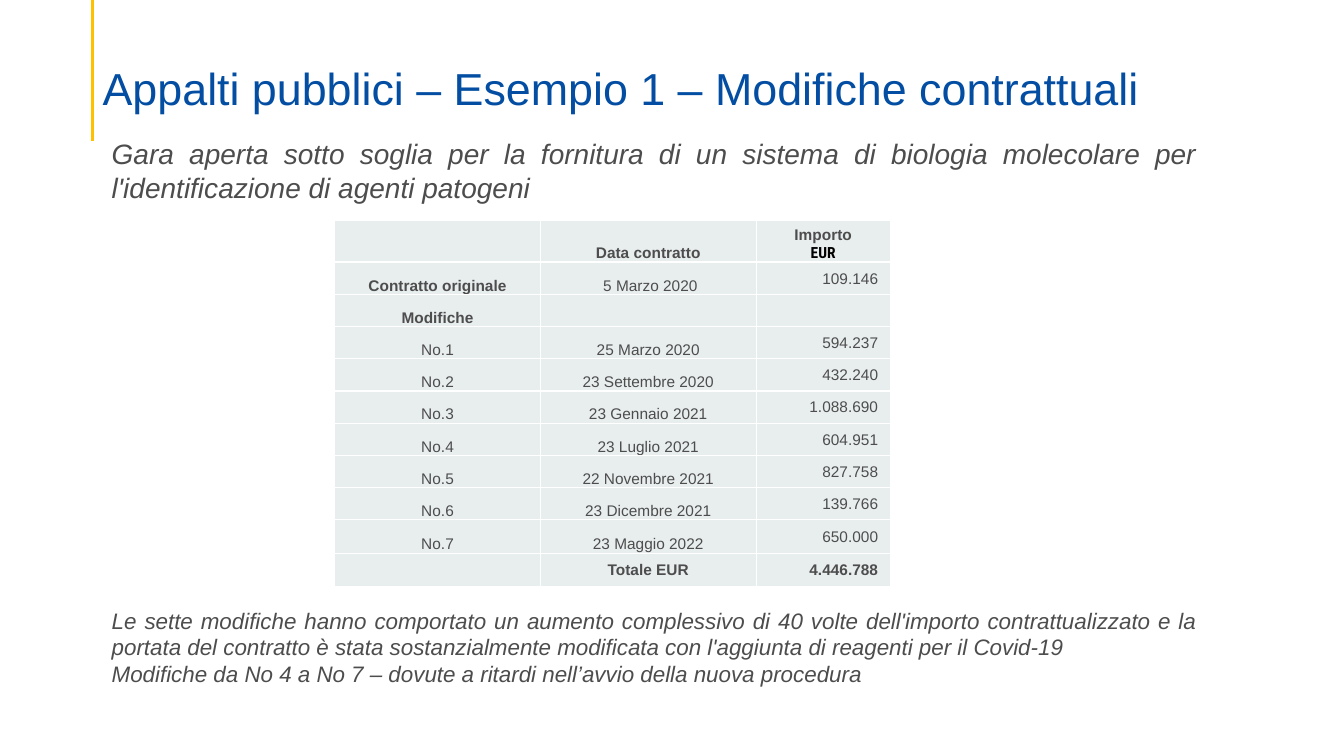
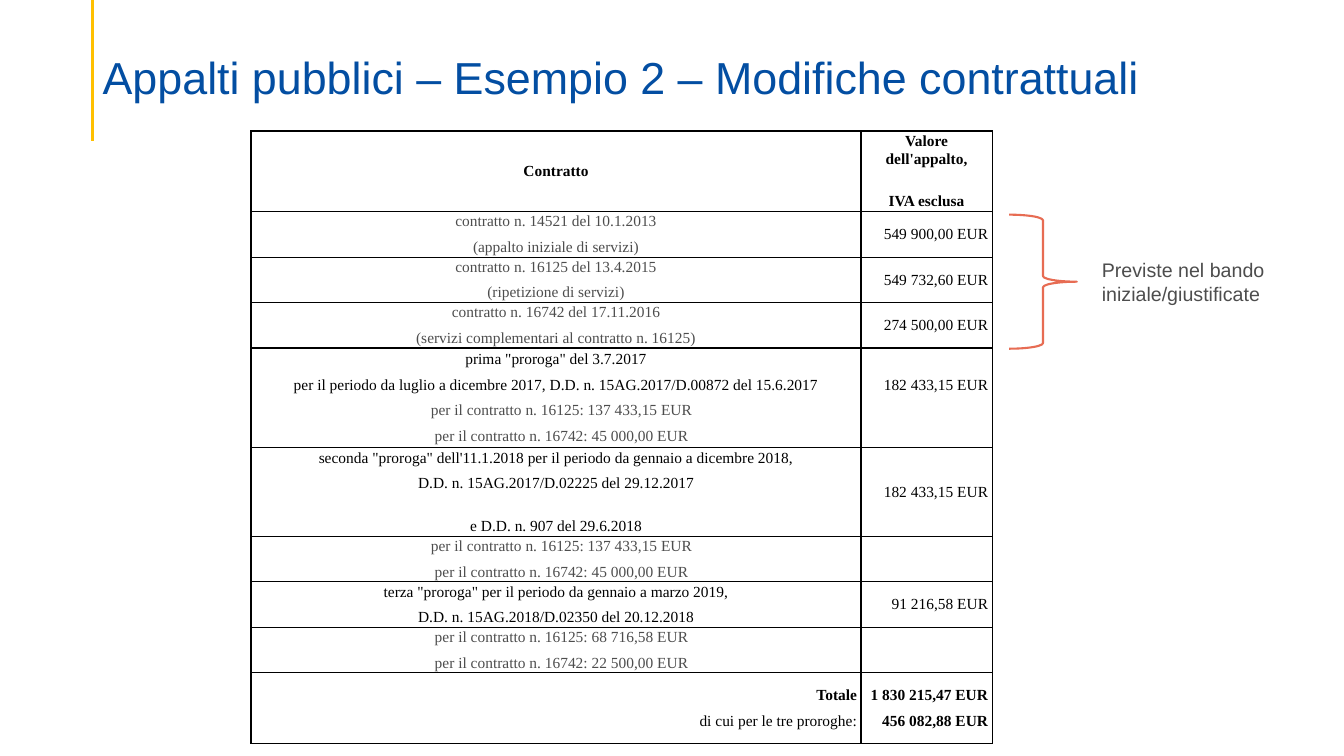
from lxml import etree
from pptx import Presentation
from pptx.dml.color import RGBColor
from pptx.enum.shapes import MSO_CONNECTOR, MSO_SHAPE
from pptx.enum.text import MSO_ANCHOR, PP_ALIGN
from pptx.oxml.ns import qn
from pptx.util import Inches, Pt

LEFT, CENTER, RIGHT, JUSTIFY = (
    PP_ALIGN.LEFT, PP_ALIGN.CENTER, PP_ALIGN.RIGHT, PP_ALIGN.JUSTIFY)
MIDDLE, BOTTOM = MSO_ANCHOR.MIDDLE, MSO_ANCHOR.BOTTOM
STRAIGHT = MSO_CONNECTOR.STRAIGHT
RIGHT_BRACE = MSO_SHAPE.RIGHT_BRACE

BLUE = RGBColor(0x03, 0x4E, 0xA2)
GOLD = RGBColor(0xFF, 0xC0, 0x00)
GREY = RGBColor(0x4D, 0x4D, 0x4D)
BLACK = RGBColor(0x00, 0x00, 0x00)
WHITE = RGBColor(0xFF, 0xFF, 0xFF)
PALE = RGBColor(0xE8, 0xED, 0xEE)
CORAL = RGBColor(0xE7, 0x6C, 0x53)

BODY_FONT = "Arial"
UNIT_FONT = "Roboto Condensed"
CONTRACT_FONT = "Times New Roman"
TABLE_SIZE = 11

AMENDMENTS = [
    ("Contratto originale", " 5 Marzo 2020", "109.146"),
    ("Modifiche", "", ""),
    ("No.1", "25 Marzo 2020", "594.237"),
    ("No.2", "23 Settembre 2020", "432.240"),
    ("No.3", "23 Gennaio 2021", "1.088.690"),
    ("No.4", "23 Luglio 2021", "604.951"),
    ("No.5", "22 Novembre 2021", "827.758"),
    ("No.6", "23 Dicembre 2021", "139.766"),
    ("No.7", "23 Maggio 2022", "650.000"),
    ("", "Totale EUR", "4.446.788"),
]
BOLD_LABELS = {"Contratto originale", "Modifiche", "Totale EUR", "4.446.788"}

VALUE_HEADING = "Valore dell'appalto,"
SECOND_DECREE = "D.D. n. 15AG.2017/D.02225 del 29.12.2017"
WIDE_GAP_AFTER = {VALUE_HEADING, SECOND_DECREE}

# Least row height, black lines, grey lines, amount
CONTRACTS = [
    (0.33, [], ["contratto n. 14521 del 10.1.2013",
                "(appalto iniziale di servizi)"], "549 900,00 EUR"),
    (0.33, [], ["contratto n. 16125 del 13.4.2015",
                "(ripetizione di servizi)"], "549 732,60 EUR"),
    (0.33, [], ["contratto n. 16742 del 17.11.2016",
                "(servizi complementari al contratto n. 16125)"],
     "274 500,00 EUR"),
    (0.55, ['prima "proroga" del 3.7.2017',
            "per il periodo da luglio a dicembre 2017, "
            "D.D. n. 15AG.2017/D.00872 del 15.6.2017"],
     ["per il contratto n. 16125: 137 433,15 EUR",
      "per il contratto n. 16742: 45 000,00 EUR"], "182 433,15 EUR"),
    (0.54, ['seconda "proroga" dell\'11.1.2018 per il periodo '
            "da gennaio a dicembre 2018,",
            SECOND_DECREE, "e D.D. n. 907 del 29.6.2018"],
     [], "182 433,15 EUR"),
    (0.23, [], ["per il contratto n. 16125: 137 433,15 EUR",
                "per il contratto n. 16742: 45 000,00 EUR"], ""),
    (0.33, ['terza "proroga" per il periodo da gennaio a marzo 2019,',
            "D.D. n. 15AG.2018/D.02350 del 20.12.2018"],
     [], "91 216,58 EUR"),
    (0.23, [], ["per il contratto n. 16125: 68 716,58 EUR",
                "per il contratto n. 16742: 22 500,00 EUR"], ""),
]
TOTALS = [("Totale", True, "1 830 215,47 EUR"),
          ("di cui per le tre proroghe:", False, "456 082,88 EUR")]


def write(frame, text, size=TABLE_SIZE, font=BODY_FONT, color=GREY, bold=False,
          italic=False, align=LEFT, line_spacing=None, space_after=0, indent=0):
    """Add one paragraph, filling the first one while it is still empty."""
    paragraph = frame.paragraphs[0] if not frame.text else frame.add_paragraph()
    paragraph.alignment = align
    paragraph.space_after = Pt(space_after)
    if line_spacing:
        paragraph.line_spacing = line_spacing
    if indent:
        paragraph._p.get_or_add_pPr().set("indent", str(Inches(indent)))
    run = paragraph.add_run()
    run.text = text
    run.font.size = Pt(size)
    run.font.name = font
    run.font.bold = bold
    run.font.italic = italic
    run.font.color.rgb = color


def write_contract(cell, text, color=BLACK, align=CENTER, bold=False):
    write(cell.text_frame, text, font=CONTRACT_FONT, color=color, bold=bold,
          align=align, space_after=18 if text in WIDE_GAP_AFTER else 6,
          indent=0.11 if text.startswith("per il contratto") else 0)


def add_text_box(slide, left, top, width, height):
    frame = slide.shapes.add_textbox(
        Inches(left), Inches(top), Inches(width), Inches(height)).text_frame
    frame.word_wrap = True
    return frame


def add_titled_slide(deck, title, title_top):
    slide = deck.slides.add_slide(deck.slide_layouts[6])
    rule = slide.shapes.add_connector(
        STRAIGHT, Inches(0.92), 0, Inches(0.92), Inches(1.4))
    rule.line.color.rgb = GOLD
    rule.line.width = Pt(2.25)
    etree.SubElement(rule._element.spPr, qn("a:effectLst"))
    frame = add_text_box(slide, 0.92, title_top, 11.5, 0.86)
    frame.vertical_anchor = BOTTOM
    frame.margin_bottom = 0
    write(frame, title, size=32, color=BLUE, line_spacing=0.9)
    return slide


def set_borders(cell, color):
    properties = cell._tc.get_or_add_tcPr()
    for side in ("lnL", "lnR", "lnT", "lnB"):
        border = etree.SubElement(properties, qn(f"a:{side}"), w=str(Pt(1)))
        fill = etree.SubElement(border, qn("a:solidFill"))
        etree.SubElement(fill, qn("a:srgbClr"), val=str(color))


def add_table(slide, left, top, widths, heights, border, fill, side_margin,
              top_margin):
    table = slide.shapes.add_table(
        len(heights), len(widths), Inches(left), Inches(top),
        Inches(sum(widths)), Inches(sum(heights))).table
    table.first_row = table.horz_banding = False
    for column, width in zip(table.columns, widths):
        column.width = Inches(width)
    for row, height in zip(table.rows, heights):
        row.height = Inches(height)
    for cell in table.iter_cells():
        cell.margin_left = cell.margin_right = Inches(side_margin)
        cell.margin_top = Inches(top_margin)
        cell.margin_bottom = 0
        cell.vertical_anchor = MIDDLE
        set_borders(cell, border)
        cell.fill.solid()
        cell.fill.fore_color.rgb = fill
    return table


def add_amendments_table(slide):
    heights = [0.41] + [0.32] * 8 + [0.33] * 2
    table = add_table(slide, 3.32, 2.19, [2.04, 2.14, 1.33], heights,
                      WHITE, PALE, 0.01, 0.01)
    date_heading, amount_heading = table.cell(0, 1), table.cell(0, 2)
    for cell, text in ((date_heading, "Data contratto"),
                       (amount_heading, "Importo")):
        cell.vertical_anchor = BOTTOM
        write(cell.text_frame, text, bold=True, align=CENTER)
    write(amount_heading.text_frame, "EUR", font=UNIT_FONT, color=BLACK,
          bold=True, align=CENTER)

    for row, values in enumerate(AMENDMENTS, start=1):
        for column, text in enumerate(values):
            if not text:
                continue
            cell = table.cell(row, column)
            is_amount = column == 2
            if is_amount:
                cell.margin_right = Inches(0.12)
            elif row < len(AMENDMENTS):
                cell.vertical_anchor = BOTTOM
            write(cell.text_frame, text, bold=text in BOLD_LABELS,
                  align=RIGHT if is_amount else CENTER)


def add_contracts_table(slide):
    heights = [0.7] + [contract[0] for contract in CONTRACTS] + [0.7]
    table = add_table(slide, 2.49, 1.3, [6.05, 1.3], heights,
                      BLACK, WHITE, 0.04, 0)
    write_contract(table.cell(0, 0), "Contratto", bold=True)
    for text in (VALUE_HEADING, "IVA esclusa"):
        write_contract(table.cell(0, 1), text, bold=True)

    for row, (_, black_lines, grey_lines, amount) in enumerate(CONTRACTS, start=1):
        description, value = table.cell(row, 0), table.cell(row, 1)
        for text in black_lines:
            write_contract(description, text)
        for text in grey_lines:
            write_contract(description, text, color=GREY)
        if amount:
            write_contract(value, amount, align=RIGHT)
        if black_lines and grey_lines:
            value.margin_bottom = Inches(0.25)

    last = len(heights) - 1
    for label, bold, amount in TOTALS:
        write_contract(table.cell(last, 0), label, align=RIGHT, bold=bold)
        write_contract(table.cell(last, 1), amount, align=RIGHT, bold=True)


def add_brace(slide, left, top, width, height):
    brace = slide.shapes.add_shape(
        RIGHT_BRACE, Inches(left), Inches(top), Inches(width), Inches(height))
    brace.shadow.inherit = False
    brace.fill.background()
    brace.line.color.rgb = CORAL
    brace.line.width = Pt(1.5)


def build_first_example(deck):
    slide = add_titled_slide(
        deck, "Appalti pubblici – Esempio 1 – Modifiche contrattuali", 0.28)
    subject = add_text_box(slide, 1.01, 1.31, 10.96, 0.77)
    write(subject, "Gara aperta sotto soglia per la fornitura di un sistema di "
          "biologia molecolare per l'identificazione di agenti patogeni",
          size=20, italic=True, align=JUSTIFY)
    add_amendments_table(slide)
    findings = add_text_box(slide, 1.01, 5.97, 10.96, 0.91)
    for text in (
            "Le sette modifiche hanno comportato un aumento complessivo di 40 "
            "volte dell'importo contrattualizzato e la portata del contratto è "
            "stata sostanzialmente modificata con l'aggiunta di reagenti per il "
            "Covid-19",
            "Modifiche da No 4 a No 7 – dovute a ritardi nell’avvio della nuova "
            "procedura"):
        write(findings, text, size=16, italic=True, align=JUSTIFY)


def build_second_example(deck):
    slide = add_titled_slide(
        deck, "Appalti pubblici – Esempio 2 – Modifiche contrattuali", 0.17)
    add_contracts_table(slide)
    add_brace(slide, 10.01, 2.13, 0.67, 1.33)
    remark = add_text_box(slide, 10.83, 2.51, 2.06, 0.57)
    write(remark, "Previste nel bando iniziale/giustificate", size=14)


def main():
    deck = Presentation()
    deck.slide_width, deck.slide_height = Inches(13.33), Inches(7.5)
    build_first_example(deck)
    build_second_example(deck)
    deck.save("out.pptx")


if __name__ == "__main__":
    main()
